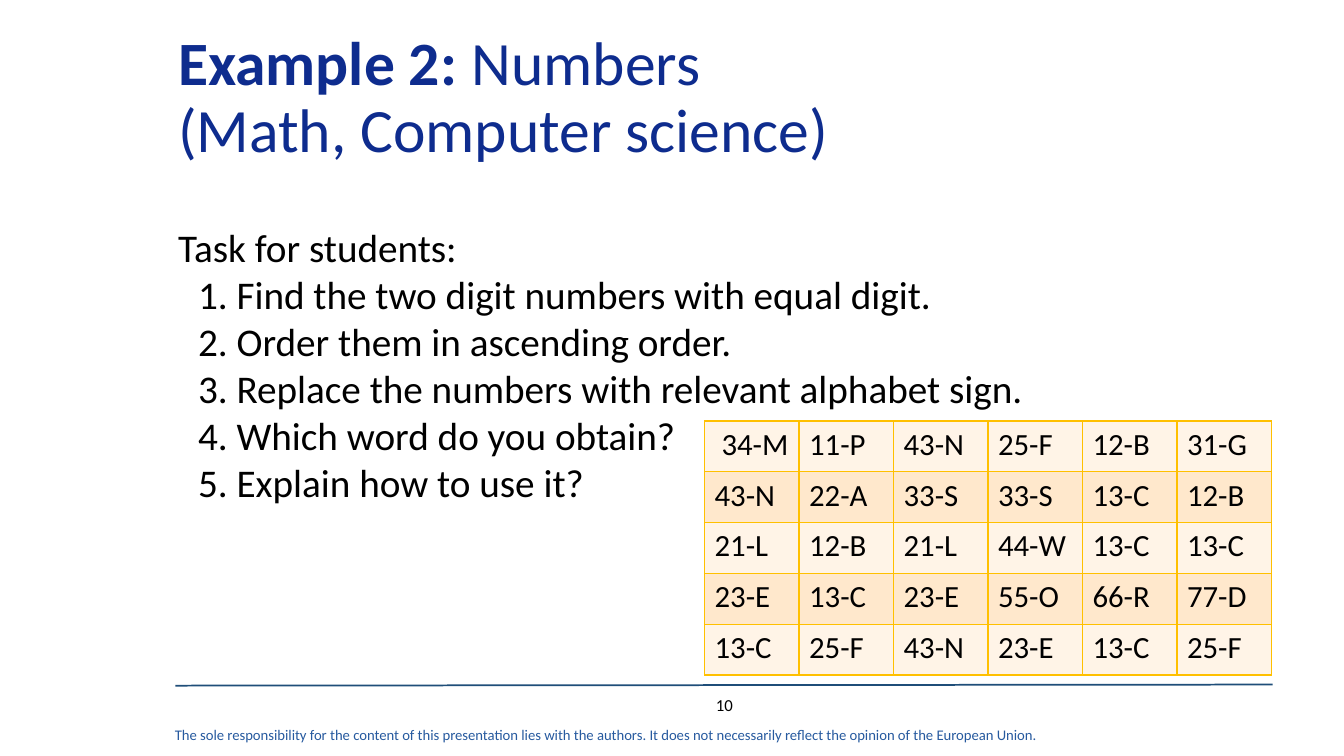
from lxml.etree import SubElement
from pptx import Presentation
from pptx.dml.color import RGBColor
from pptx.enum.shapes import MSO_CONNECTOR
from pptx.enum.text import MSO_ANCHOR, MSO_AUTO_SIZE, PP_ALIGN
from pptx.oxml.ns import qn
from pptx.util import Emu, Pt

FONT = "Calibri"
BLACK = "000000"
TITLE_BLUE = "0E2C8E"
FOOTER_BLUE = "275A9F"
RULE_BLUE = "1F4E79"
BORDER_GOLD = "FFC000"
ROW_FILLS = ("FFF4E7", "FFE8CC")
TASKS = [
    "1. Find the two digit numbers with equal digit.",
    "2. Order them in ascending order.",
    "3. Replace the numbers with relevant alphabet sign.",
    "4. Which word do you obtain?",
    "5. Explain how to use it?",
]
NUMBER_ROWS = [
    [" 34-M", "11-P", "43-N", "25-F", "12-B", "31-G"],
    ["43-N", "22-A", "33-S", "33-S", "13-C", "12-B"],
    ["21-L", "12-B", "21-L", "44-W", "13-C", "13-C"],
    ["23-E", "13-C", "23-E", "55-O", "66-R", "77-D"],
    ["13-C", "25-F", "43-N", "23-E", "13-C", "25-F"],
]
DISCLAIMER = (
    "The sole responsibility for the content of this presentation lies with the authors. "
    "It does not necessarily reflect the opinion of the European Union."
)


def px(length):
    """Turn px, 96 to the inch, into EMU."""
    return Emu(int(length * 9525))


def rgb(value):
    """Turn a hex string into a colour."""
    return RGBColor.from_string(value)


def place(shape, box):
    """Move a shape to a box given as left, top, width, height."""
    shape.left, shape.top, shape.width, shape.height = map(px, box)


def format_runs(paragraph, size, colour):
    """Set font, size and colour on every run of a paragraph."""
    for run in paragraph.runs:
        run.font.name = FONT
        run.font.size = Pt(size)
        run.font.color.rgb = rgb(colour)


def fill_title(slide, box):
    """Write the two-line heading into the title placeholder."""
    title = slide.shapes.title
    place(title, box)
    text_frame = title.text_frame
    text_frame.auto_size = MSO_AUTO_SIZE.NONE
    text_frame.vertical_anchor = MSO_ANCHOR.MIDDLE
    text_frame.text = "Example 2: "
    paragraph = text_frame.paragraphs[0]
    paragraph.add_run().text = "Numbers "
    paragraph.add_line_break()
    paragraph.add_run().text = "(Math, Computer science)"
    paragraph.alignment = PP_ALIGN.LEFT
    paragraph.line_spacing = 0.9
    format_runs(paragraph, 44, TITLE_BLUE)
    for index, run in enumerate(paragraph.runs):
        run.font.bold = index == 0


def fill_tasks(slide, box):
    """Write the task list into the body placeholder."""
    body = slide.placeholders[1]
    place(body, box)
    text_frame = body.text_frame
    text_frame.auto_size = MSO_AUTO_SIZE.NONE
    text_frame.text = "\n".join(["Task for students:"] + TASKS)
    for index, paragraph in enumerate(text_frame.paragraphs):
        properties = paragraph._p.get_or_add_pPr()
        properties.set("marL", str(px(19 if index else 0)))
        properties.set("indent", "0")
        SubElement(properties, qn("a:buNone"))
        paragraph.space_before = Pt(0)
        format_runs(paragraph, 28, BLACK)


def add_borders(cell):
    """Draw the four borders of a table cell."""
    properties = cell._tc.get_or_add_tcPr()
    for side in ("a:lnL", "a:lnR", "a:lnT", "a:lnB"):
        line = SubElement(properties, qn(side), w=str(Pt(1)))
        fill = SubElement(line, qn("a:solidFill"))
        SubElement(fill, qn("a:srgbClr"), val=BORDER_GOLD)


def add_number_table(slide, box):
    """Add the grid of numbers and letters with alternating row fills."""
    row_count, column_count = len(NUMBER_ROWS), len(NUMBER_ROWS[0])
    frame = slide.shapes.add_table(row_count, column_count, *map(px, box))
    table = frame.table
    for row_index, entries in enumerate(NUMBER_ROWS):
        for column_index, entry in enumerate(entries):
            cell = table.cell(row_index, column_index)
            add_borders(cell)
            cell.fill.solid()
            cell.fill.fore_color.rgb = rgb(ROW_FILLS[row_index % 2])
            cell.text = entry
            paragraph = cell.text_frame.paragraphs[0]
            format_runs(paragraph, 22, BLACK)
            paragraph.runs[0].font.bold = False


def add_label(slide, box, text, size, colour, alignment):
    """Add one line of vertically centred text."""
    text_frame = slide.shapes.add_textbox(*map(px, box)).text_frame
    text_frame.word_wrap = True
    text_frame.vertical_anchor = MSO_ANCHOR.MIDDLE
    text_frame.text = text
    paragraph = text_frame.paragraphs[0]
    paragraph.alignment = alignment
    format_runs(paragraph, size, colour)


def add_footer(slide, box):
    """Add the rule, the page number and the disclaimer."""
    left, top, width, height = box
    rule = slide.shapes.add_connector(
        MSO_CONNECTOR.STRAIGHT, px(left + 10), px(top + 1), px(left + width), px(top)
    )
    rule.line.color.rgb = rgb(RULE_BLUE)
    rule.line.width = Pt(1.25)
    SubElement(rule._element.spPr, qn("a:effectLst"))
    add_label(slide, (left + 504, top, 58, 38), "10", 12, BLACK, PP_ALIGN.CENTER)
    disclaimer_box = (left, top + height - 25, 861, 25)
    add_label(slide, disclaimer_box, DISCLAIMER, 10.5, FOOTER_BLUE, PP_ALIGN.LEFT)


def main():
    """Build the slide and save it."""
    presentation = Presentation()
    presentation.slide_width = px(1280)
    presentation.slide_height = px(720)
    slide = presentation.slides.add_slide(presentation.slide_layouts[1])
    fill_title(slide, (160, 25, 927, 139))
    fill_tasks(slide, (160, 208, 927, 282))
    add_number_table(slide, (671, 401, 540, 242))
    add_footer(slide, (157, 652, 1055, 60))
    presentation.save("out.pptx")


if __name__ == "__main__":
    main()
